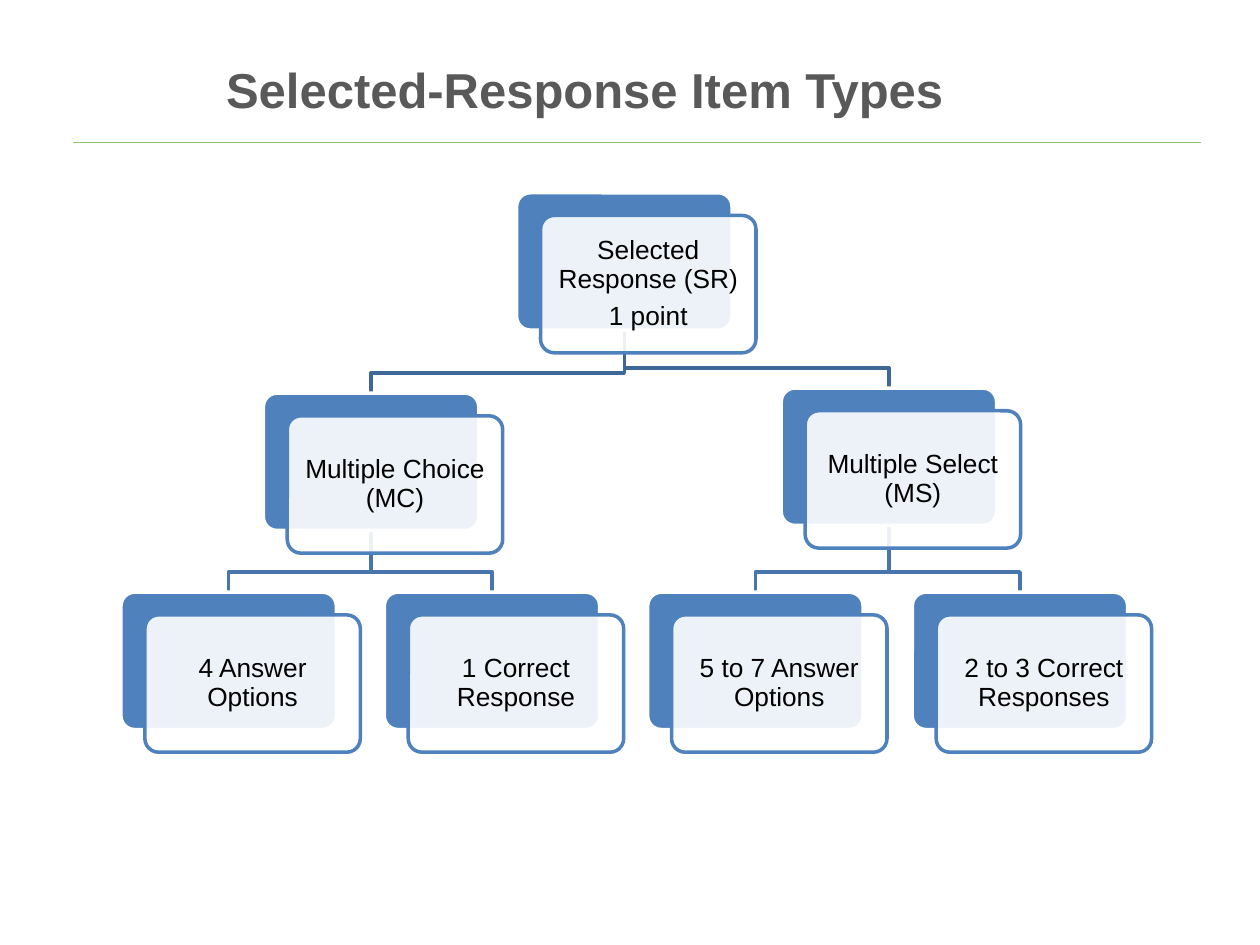
from lxml import etree
from pptx import Presentation
from pptx import util as u
from pptx.dml.color import RGBColor
from pptx.enum import shapes, text
from pptx.oxml.ns import qn

CARD_W, CARD_H = 1.71, 1.09
OFFSET_X, OFFSET_Y = 0.19, 0.18
BEND = 0.16  # height of a branch's last vertical piece
BLUE, WHITE = "4F81BD", "FFFFFF"

# name: (left, top, paragraphs)
CARDS = {
    "SR": (4.1, 1.53, ["Selected Response (SR)", "1 point"]),
    "MC": (2.09, 3.12, ["Multiple Choice (MC)"]),
    "MC options": (0.96, 4.7, ["4 Answer Options"]),
    "MC correct": (3.05, 4.7, ["1 Correct Response"]),
    "MS": (6.2, 3.08, ["Multiple Select (MS)"]),
    "MS options": (5.14, 4.7, ["5 to 7 Answer Options"]),
    "MS correct": (7.24, 4.7, ["2 to 3 Correct Responses"]),
}
# parent: (branch colour, children)
BRANCHES = {
    "MS": ("4875AC", ["MS correct", "MS options"]),
    "MC": ("4875AC", ["MC correct", "MC options"]),
    "SR": ("3F6797", ["MS", "MC"]),
}


def rgb(color):
    return RGBColor.from_string(color)


def set_line(sp, color, width):
    sp.line.color.rgb = rgb(color)
    sp.line.width = u.Pt(width)


def write(p, content, size, color="000000", bold=False, spacing=None, after=0):
    p.alignment = text.PP_ALIGN.CENTER
    p.line_spacing = spacing
    p.space_before = u.Pt(0)
    p.space_after = u.Pt(after)
    r = p.add_run()
    r.text = content
    r.font.name, r.font.size, r.font.bold = "Arial", u.Pt(size), bold
    r.font.color.rgb = rgb(color)


def add_title(s, content):
    sp = s.shapes.title
    sp.left, sp.top, sp.width, sp.height = map(u.Inches, (0.57, 0.37, 8.14, 0.72))
    tf = sp.text_frame
    tf.vertical_anchor = text.MSO_ANCHOR.TOP
    tf.margin_top = u.Inches(0.1)
    write(tf.paragraphs[0], content, 28, color="595959", bold=True)


def add_rule(s, x1, x2, y):
    c = s.shapes.add_connector(shapes.MSO_CONNECTOR.STRAIGHT,
                               *map(u.Inches, (x1, y, x2, y)))
    set_line(c, "90C56A", 1)
    etree.SubElement(c._element.spPr, qn("a:effectLst"))


def add_branch(s, parent, child, color):
    """Draw an elbow from the parent's bottom centre to the child's top centre."""
    x1, y1 = parent[0] + CARD_W / 2, parent[1] + CARD_H
    x2, y2 = child[0] + CARD_W / 2, child[1]
    points = [(x1, y1), (x1, y2 - BEND), (x2, y2 - BEND), (x2, y2)]
    start, *rest = [(u.Inches(x), u.Inches(y)) for x, y in points]
    fb = s.shapes.build_freeform(*start)
    fb.add_line_segments(rest, close=False)
    sp = fb.convert_to_shape()
    sp.shadow.inherit = False
    sp.fill.background()
    set_line(sp, color, 2)


def add_round_rect(s, x, y, fill, line):
    sp = s.shapes.add_shape(shapes.MSO_SHAPE.ROUNDED_RECTANGLE,
                            *map(u.Inches, (x, y, CARD_W, CARD_H)))
    sp.adjustments[0] = 0.1
    sp.shadow.inherit = False
    sp.fill.solid()
    sp.fill.fore_color.rgb = rgb(fill)
    set_line(sp, line, 2)
    return sp


def add_card(s, x, y, lines):
    """Draw a blue backing with a translucent white card holding the text."""
    add_round_rect(s, x, y, BLUE, WHITE)
    sp = add_round_rect(s, x + OFFSET_X, y + OFFSET_Y, WHITE, BLUE)
    color = sp._element.spPr.find(qn("a:solidFill"))[0]
    etree.SubElement(color, qn("a:alpha"), val="90000")
    tf = sp.text_frame
    tf.word_wrap = True
    tf.vertical_anchor = text.MSO_ANCHOR.MIDDLE
    tf.margin_left = tf.margin_right = u.Inches(0.06)
    tf.margin_top = tf.margin_bottom = u.Inches(0.06)
    for i, line in enumerate(lines):
        p = tf.add_paragraph() if i else tf.paragraphs[0]
        write(p, line, 15, spacing=0.9, after=5.25)


def main():
    prs = Presentation()
    prs.slide_width, prs.slide_height = u.Inches(10), u.Inches(7.5)
    s = prs.slides.add_slide(prs.slide_layouts[5])
    add_rule(s, 0.58, 9.53, 1.13)
    add_title(s, "Selected-Response Item Types")
    for parent, (color, children) in BRANCHES.items():
        for child in children:
            add_branch(s, CARDS[parent], CARDS[child], color)
    for card in CARDS.values():
        add_card(s, *card)
    prs.save("out.pptx")


if __name__ == "__main__":
    main()
